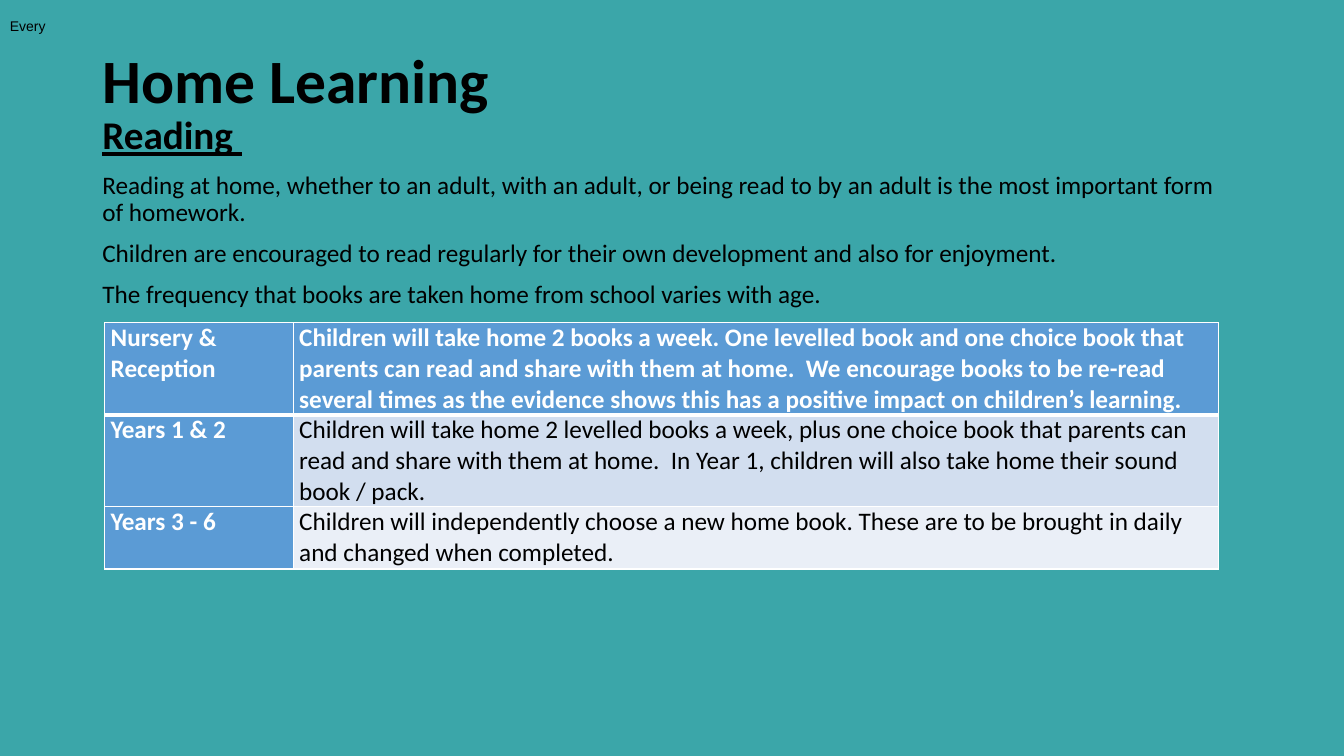
"""Build the Home Learning slide about reading at home."""
from lxml import etree
from pptx import Presentation
from pptx.dml.color import RGBColor
from pptx.enum import text
from pptx.oxml import ns
from pptx.util import Cm, Pt

TEAL = RGBColor(0x3B, 0xA6, 0xA9)
BLUE = RGBColor(0x5B, 0x9B, 0xD5)
LIGHT_BLUE = RGBColor(0xD2, 0xDE, 0xEF)
PALE_BLUE = RGBColor(0xEA, 0xEF, 0xF7)
WHITE = RGBColor(0xFF, 0xFF, 0xFF)
BLACK = RGBColor(0, 0, 0)

CORNER = "Every"
TITLE = "Home Learning"
HEADING = "Reading "
INTRO = [
    "Reading at home, whether to an adult, with an adult, or being read to by an adult "
    "is the most important form of homework.",
    "Children are encouraged to read regularly for their own development and also for enjoyment.",
    "The frequency that books are taken home from school varies with age.",
]
YEAR_GROUPS = [
    ("Nursery & Reception",
     "Children will take home 2 books a week. One levelled book and one choice book that "
     "parents can read and share with them at home.  We encourage books to be re-read several "
     "times as the evidence shows this has a positive impact on children’s learning."),
    ("Years 1 & 2",
     "Children will take home 2 levelled books a week, plus one choice book that parents can "
     "read and share with them at home.  In Year 1, children will also take home their sound "
     "book / pack."),
    ("Years 3 - 6",
     "Children will independently choose a new home book. These are to be brought in daily "
     "and changed when completed."),
]
GUIDANCE_FILLS = [BLUE, LIGHT_BLUE, PALE_BLUE]
COLUMN_WIDTHS = [4.75, 23.32]
ROW_HEIGHTS = [2.32, 2.32, 1.57]


def format_runs(paragraph, size, color=BLACK, bold=False, underline=False, name="Calibri"):
    for run in paragraph.runs:
        run.font.size = Pt(size)
        run.font.name = name
        run.font.color.rgb = color
        run.font.bold = bold
        run.font.underline = underline


def add_frame(slide, left, top, width, height, anchor, wrap=True):
    frame = slide.shapes.add_textbox(Cm(left), Cm(top), Cm(width), Cm(height)).text_frame
    frame.word_wrap = wrap
    frame.vertical_anchor = anchor
    return frame


def add_borders(cell, widths):
    properties = cell._tc.get_or_add_tcPr()
    for position, (side, width) in enumerate(widths.items()):
        line = etree.Element(ns.qn(f"a:ln{side}"), w=str(Pt(width)))
        fill = etree.SubElement(line, ns.qn("a:solidFill"))
        etree.SubElement(fill, ns.qn("a:srgbClr"), val=str(WHITE))
        properties.insert(position, line)


def add_year_table(slide):
    table = slide.shapes.add_table(
        len(YEAR_GROUPS), len(COLUMN_WIDTHS), Cm(2.64), Cm(8.13),
        Cm(sum(COLUMN_WIDTHS)), Cm(sum(ROW_HEIGHTS))).table
    for column, width in zip(table.columns, COLUMN_WIDTHS):
        column.width = Cm(width)
    for r, group in enumerate(YEAR_GROUPS):
        table.rows[r].height = Cm(ROW_HEIGHTS[r])
        for c, wording in enumerate(group):
            cell = table.cell(r, c)
            cell.margin_left = cell.margin_right = Cm(0.15)
            cell.margin_top = cell.margin_bottom = 0
            cell.fill.solid()
            cell.fill.fore_color.rgb = BLUE if c == 0 else GUIDANCE_FILLS[r]
            add_borders(cell, {"L": 1, "R": 1, "T": 3 if r == 1 else 1, "B": 3 if r == 0 else 1})
            cell.text_frame.text = wording
            paragraph = cell.text_frame.paragraphs[0]
            paragraph.space_before = Pt(6)
            emphasised = r == 0 or c == 0
            format_runs(paragraph, 18, WHITE if emphasised else BLACK, emphasised)


def main():
    deck = Presentation()
    deck.slide_width, deck.slide_height = Cm(33.87), Cm(19.05)
    slide = deck.slides.add_slide(deck.slide_layouts[6])
    slide.background.fill.solid()
    slide.background.fill.fore_color.rgb = TEAL

    title = add_frame(slide, 2.33, 1.02, 29.21, 2.16, text.MSO_ANCHOR.MIDDLE)
    title.text = TITLE
    title.paragraphs[0].line_spacing = 0.9
    format_runs(title.paragraphs[0], 44, bold=True)

    body = add_frame(slide, 2.33, 2.8, 28.73, 12.67, text.MSO_ANCHOR.TOP)
    body.text = "\n".join([HEADING, *INTRO])
    for index, paragraph in enumerate(body.paragraphs):
        paragraph.line_spacing = 0.9
        paragraph.space_before = Pt(10)
        heading = index == 0
        format_runs(paragraph, 28 if heading else 18, bold=heading, underline=heading)

    add_year_table(slide)

    corner = add_frame(slide, 0, 0.3, 1.42, 0.69, text.MSO_ANCHOR.MIDDLE, wrap=False)
    corner.auto_size = text.MSO_AUTO_SIZE.SHAPE_TO_FIT_TEXT
    corner.text = CORNER
    format_runs(corner.paragraphs[0], 10, name="Arial")

    deck.save("out.pptx")


if __name__ == "__main__":
    main()
